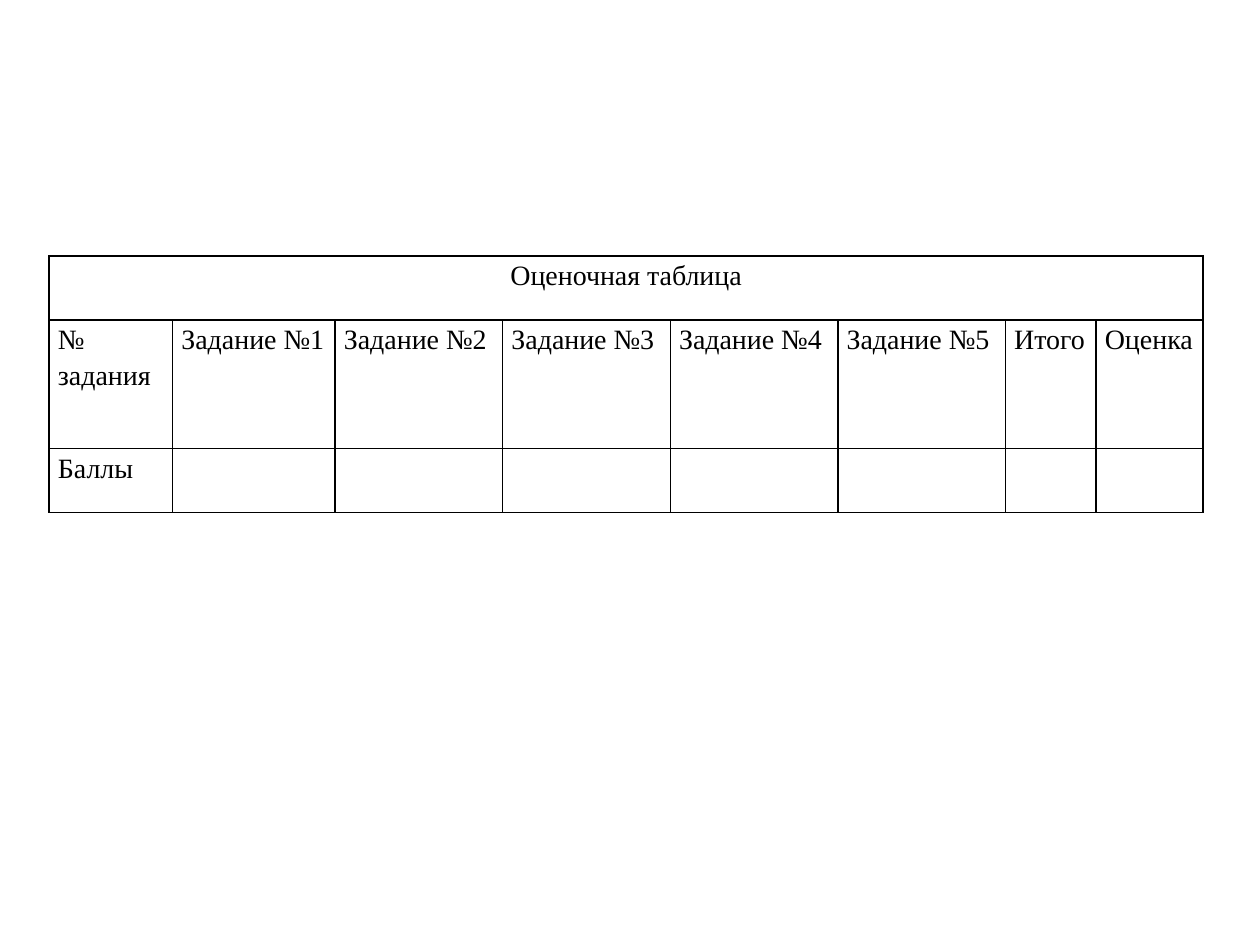
from lxml import etree
from pptx import Presentation
from pptx.dml.color import RGBColor
from pptx.enum.text import PP_ALIGN
from pptx.oxml.ns import qn
from pptx.util import Inches, Pt

LEFT, CENTER = PP_ALIGN.LEFT, PP_ALIGN.CENTER
BLANK_LAYOUT = 6
BLACK = RGBColor(0x00, 0x00, 0x00)
FONT = "Times New Roman"

TASK_COUNT = 5
TITLE = "Оценочная таблица"
HEADINGS = (
    ["№ задания"]
    + [f"Задание №{number}" for number in range(1, TASK_COUNT + 1)]
    + ["Итого", "Оценка"]
)
ROWS = [
    [TITLE] + [""] * (len(HEADINGS) - 1),
    HEADINGS,
    ["Баллы"] + [""] * (len(HEADINGS) - 1),
]
COLUMN_WIDTHS = [0.98, 1.29] + [1.33] * (TASK_COUNT - 1) + [0.72, 0.85]
ROW_HEIGHTS = [0.51, 1.02, 0.51]


def add_borders(cell):
    """Draw a thin black line on all four sides of a cell."""
    properties = cell._tc.get_or_add_tcPr()
    for side in ("lnL", "lnR", "lnT", "lnB"):
        line = etree.SubElement(properties, qn(f"a:{side}"), w=str(Pt(1)))
        fill = etree.SubElement(line, qn("a:solidFill"))
        etree.SubElement(fill, qn("a:srgbClr"), val=str(BLACK))


def fill_cell(cell, text, alignment):
    """Set the text, margins, borders and fill of a cell."""
    cell.margin_left = cell.margin_right = Inches(0.07)
    cell.margin_top = cell.margin_bottom = 0
    add_borders(cell)
    cell.fill.background()
    cell.text_frame.text = text
    para = cell.text_frame.paragraphs[0]
    para.alignment = alignment
    para.line_spacing = 1.15
    para.font.size = Pt(16)
    for span in para.runs:
        span.font.name = FONT
        span.font.size = Pt(16)
        span.font.color.rgb = BLACK


def add_score_table(page):
    """Add the score table with its merged title row."""
    frame = page.shapes.add_table(
        len(ROWS), len(HEADINGS), Inches(0.39), Inches(2.03),
        Inches(sum(COLUMN_WIDTHS)), Inches(sum(ROW_HEIGHTS)),
    )
    table = frame.table
    table.first_row = table.horz_banding = False
    for column, width in zip(table.columns, COLUMN_WIDTHS):
        column.width = Inches(width)
    for row, height in zip(table.rows, ROW_HEIGHTS):
        row.height = Inches(height)

    # Title across all columns
    table.cell(0, 0).merge(table.cell(0, len(HEADINGS) - 1))

    for row, texts in zip(table.rows, ROWS):
        alignment = CENTER if texts[0] == TITLE else LEFT
        for cell, text in zip(row.cells, texts):
            fill_cell(cell, text, alignment)


def main():
    deck = Presentation()
    deck.slide_width, deck.slide_height = Inches(10), Inches(7.5)
    page = deck.slides.add_slide(deck.slide_layouts[BLANK_LAYOUT])
    add_score_table(page)
    deck.save("out.pptx")


if __name__ == "__main__":
    main()
